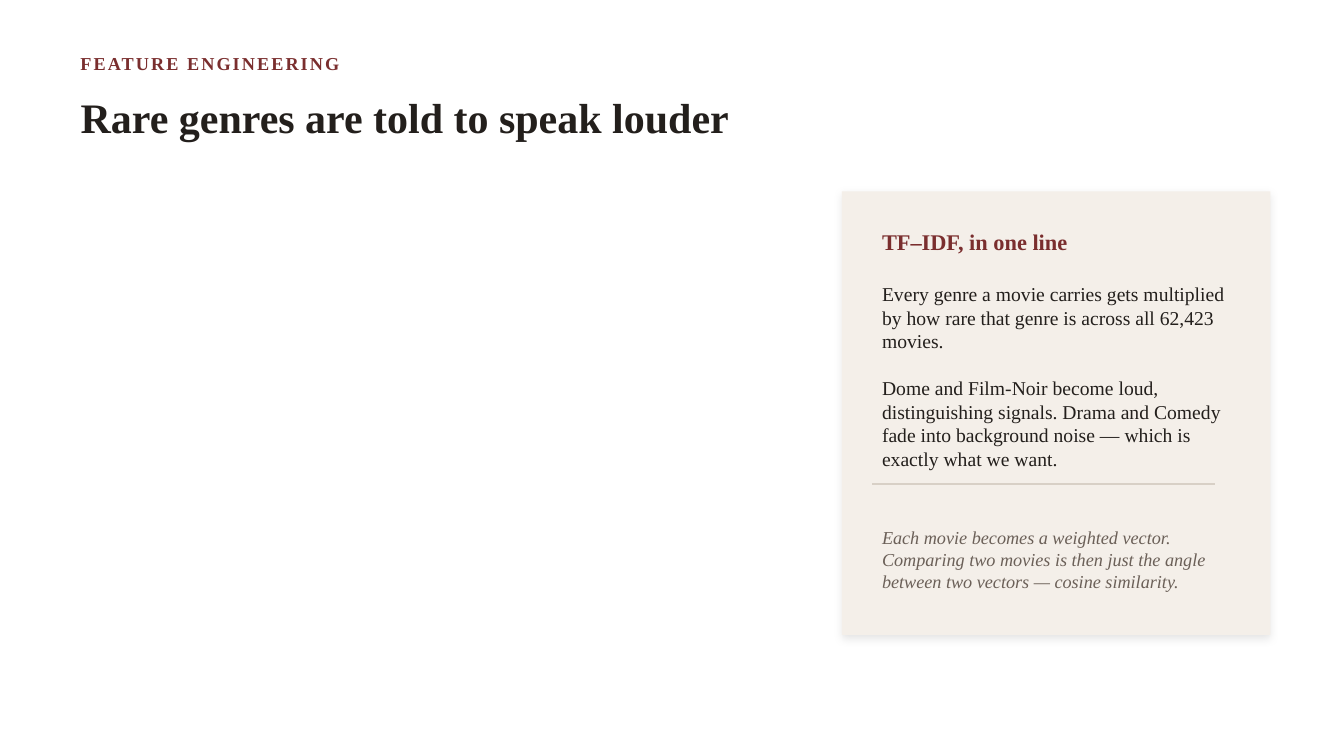
import dataclasses

import lxml.etree
import pptx
import pptx.dml.color
import pptx.enum.shapes
import pptx.enum.text
import pptx.oxml.ns
import pptx.util

PX = pptx.util.Inches(1) // 100  # 100 px to the inch
POINT = pptx.util.Pt(1)


@dataclasses.dataclass(frozen=True)
class Theme:
    font: str = "Times New Roman"
    accent: str = "7A2E2E"
    ink: str = "231F1C"
    muted: str = "6B6058"
    card: str = "F4EFE9"
    rule: str = "D8D0C6"
    shadow: str = "000000"
    title_size: int = 30
    heading_size: int = 16
    body_size: int = 14
    small_size: int = 13


THEME = Theme()
CARD_BOX = (835, 190, 425, 440)
HEADER_BOX = (70, 45, 1190, 108)


def color(value):
    return pptx.dml.color.RGBColor.from_string(value)


def emu(*lengths):
    return [length * PX for length in lengths]


def add_effects(shape):
    return lxml.etree.SubElement(
        shape._element.spPr, pptx.oxml.ns.qn("a:effectLst"))


def write_text(shape, text, size, text_color, spacing=0, **formats):
    """Put one formatted line or paragraph into a shape."""
    frame = shape.text_frame
    frame_formats = {
        "word_wrap": True,
        "auto_size": pptx.enum.text.MSO_AUTO_SIZE.NONE,
        "vertical_anchor": pptx.enum.text.MSO_ANCHOR.MIDDLE,
    }
    for name, value in frame_formats.items():
        setattr(frame, name, value)
    paragraph = frame.paragraphs[0]
    paragraph.alignment = pptx.enum.text.PP_ALIGN.LEFT
    run = paragraph.add_run()
    run.text = text
    font_formats = {"name": THEME.font, "size": pptx.util.Pt(size), **formats}
    for name, value in font_formats.items():
        setattr(run.font, name, value)
    run.font.color.rgb = color(text_color)
    if spacing:
        run._r.get_or_add_rPr().set("spc", str(spacing))


def add_header(slide, box):
    """Small section label above the slide title."""
    left, top, width, height = box
    label = slide.shapes.add_textbox(*emu(left, top, 1000, 35))
    write_text(label, "FEATURE ENGINEERING", THEME.small_size, THEME.accent,
               spacing=150, bold=True)

    title = slide.shapes.title
    title_height = 75
    places = emu(left, top + height - title_height, width, title_height)
    for name, value in zip(("left", "top", "width", "height"), places):
        setattr(title, name, value)
    write_text(title, "Rare genres are told to speak louder",
               THEME.title_size, THEME.ink, bold=True)


def add_panel(slide, box):
    """Plain panel with a soft shadow below it."""
    panel = slide.shapes.add_shape(
        pptx.enum.shapes.MSO_SHAPE.RECTANGLE, *emu(*box))
    panel.fill.solid()
    panel.fill.fore_color.rgb = color(THEME.card)
    panel.line.fill.background()
    qn = pptx.oxml.ns.qn
    shadow = lxml.etree.SubElement(
        add_effects(panel), qn("a:outerShdw"), blurRad=str(6 * POINT),
        dist=str(2 * POINT), dir="5400000", algn="ctr", rotWithShape="0")
    tint = lxml.etree.SubElement(shadow, qn("a:srgbClr"), val=THEME.shadow)
    lxml.etree.SubElement(tint, qn("a:alpha"), val="10000")


def add_card(slide, box):
    """Explanation card: heading, two paragraphs, rule and closing remark."""
    add_panel(slide, box)
    left, top = box[0] + 30, box[1]
    width = box[2] - 55

    # Text rows: offset from the card top, height, wording and format
    rows = [
        (25, 50, "TF–IDF, in one line",
         THEME.heading_size, THEME.accent, {"bold": True}),
        (80, 90, "Every genre a movie carries gets multiplied by how rare "
         "that genre is across all 62,423 movies.",
         THEME.body_size, THEME.ink, {}),
        (175, 110, "Dome and Film-Noir become loud, distinguishing signals. "
         "Drama and Comedy fade into background noise — which is exactly "
         "what we want.",
         THEME.body_size, THEME.ink, {}),
        (310, 110, "Each movie becomes a weighted vector. Comparing two "
         "movies is then just the angle between two vectors — cosine "
         "similarity.",
         THEME.small_size, THEME.muted, {"italic": True}),
    ]
    for offset, height, text, size, text_color, formats in rows:
        text_box = slide.shapes.add_textbox(
            *emu(left, top + offset, width, height))
        write_text(text_box, text, size, text_color, **formats)

    # Rule above the closing remark
    rule_top = top + 290
    rule = slide.shapes.add_connector(
        pptx.enum.shapes.MSO_CONNECTOR.STRAIGHT,
        *emu(left, rule_top, left + 340, rule_top))
    rule.line.color.rgb = color(THEME.rule)
    rule.line.width = pptx.util.Pt(1)
    add_effects(rule)


def main():
    presentation = pptx.Presentation()
    presentation.slide_width, presentation.slide_height = emu(1333, 750)
    title_only = presentation.slide_layouts.get_by_name("Title Only")
    slide = presentation.slides.add_slide(title_only)
    add_header(slide, HEADER_BOX)
    add_card(slide, CARD_BOX)
    presentation.save("out.pptx")


if __name__ == "__main__":
    main()
